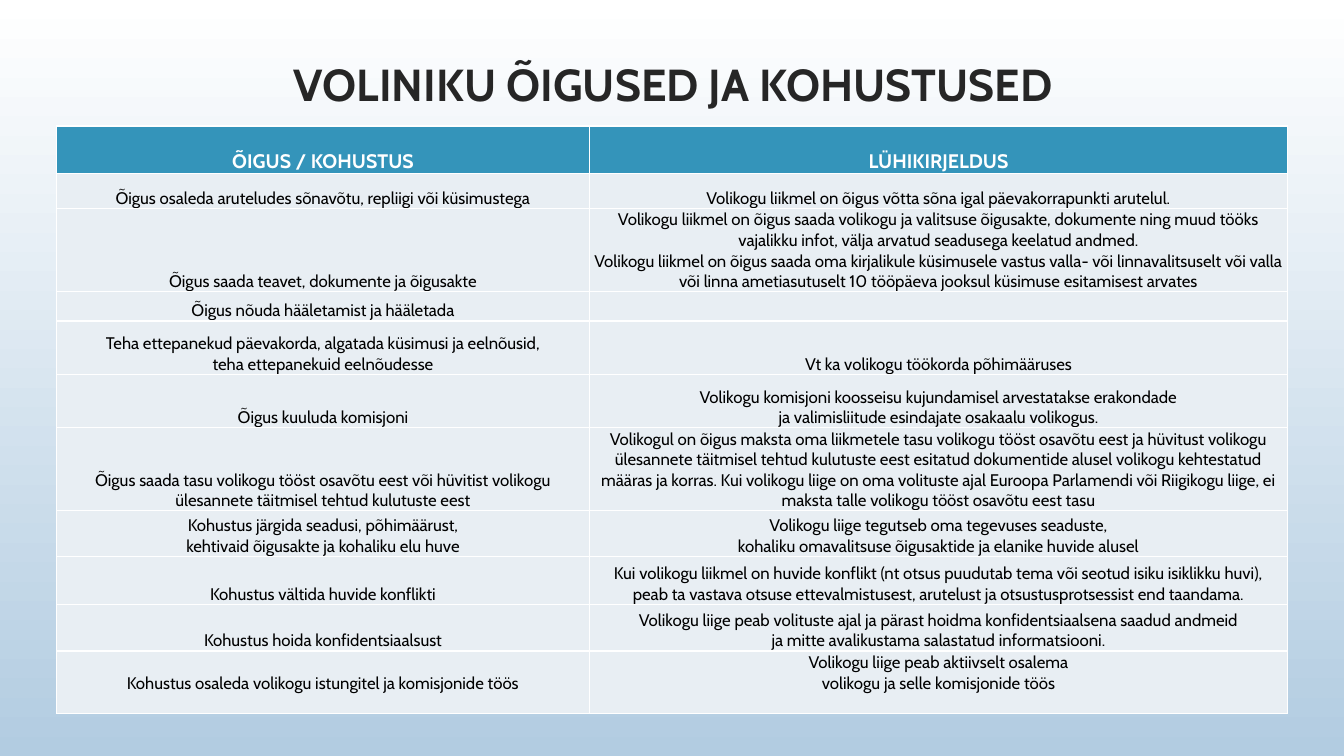
from lxml import etree
from pptx import Presentation
from pptx.dml.color import RGBColor
from pptx.enum.text import MSO_ANCHOR, MSO_AUTO_SIZE, PP_ALIGN
from pptx.oxml.ns import qn
from pptx.util import Inches, Pt

CENTER = PP_ALIGN.CENTER
MIDDLE, BOTTOM = MSO_ANCHOR.MIDDLE, MSO_ANCHOR.BOTTOM
NO_AUTOFIT = MSO_AUTO_SIZE.NONE
TITLE_ONLY = 5
FONT = "Cabin"
COLORS = {
    "sky_top": "FFFFFF",
    "sky_bottom": "B2CCE1",
    "title": "262626",
    "header": "3494BA",
    "header_text": "FFFFFF",
    "cell": "E8EEF3",
    "cell_text": "000000",
    "border": "FFFFFF",
}

TITLE = "VOLINIKU ÕIGUSED JA KOHUSTUSED"
COLUMN_WIDTHS = [5.29, 6.92]
LAST_ROW_BOTTOM_INSET = 0.2

# Row height, then the paragraphs of the left and of the right cell
DUTIES = [
    (0.47, ["ÕIGUS / KOHUSTUS"], ["LÜHIKIRJELDUS"]),
    (0.35, ["Õigus osaleda aruteludes sõnavõtu, repliigi või küsimustega"],
     ["Volikogu liikmel on õigus võtta sõna igal päevakorrapunkti arutelul."]),
    (0.82, ["Õigus saada teavet, dokumente ja õigusakte"],
     ["Volikogu liikmel on õigus saada volikogu ja valitsuse õigusakte, dokumente "
      "ning muud tööks vajalikku infot, välja arvatud seadusega keelatud andmed.",
      "Volikogu liikmel on õigus saada oma kirjalikule küsimusele vastus valla- või "
      "linnavalitsuselt või valla või linna ametiasutuselt 10 tööpäeva jooksul "
      "küsimuse esitamisest arvates"]),
    (0.29, ["Õigus nõuda hääletamist ja hääletada"], []),
    (0.53, ["Teha ettepanekud päevakorda, algatada küsimusi ja eelnõusid,",
            "teha ettepanekuid eelnõudesse"],
     ["Vt ka volikogu töökorda põhimääruses"]),
    (0.53, ["Õigus kuuluda komisjoni"],
     ["Volikogu komisjoni koosseisu kujundamisel arvestatakse erakondade",
      "ja valimisliitude esindajate osakaalu volikogus."]),
    (0.82, ["Õigus saada tasu volikogu tööst osavõtu eest või hüvitist volikogu "
            "ülesannete täitmisel tehtud kulutuste eest"],
     ["Volikogul on õigus maksta oma liikmetele tasu volikogu tööst osavõtu eest ja "
      "hüvitust volikogu ülesannete täitmisel tehtud kulutuste eest esitatud "
      "dokumentide alusel volikogu kehtestatud määras ja korras. Kui volikogu liige "
      "on oma volituste ajal Euroopa Parlamendi või Riigikogu liige, ei maksta talle "
      "volikogu tööst osavõtu eest tasu"]),
    (0.45, ["Kohustus järgida seadusi, põhimäärust,",
            "kehtivaid õigusakte ja kohaliku elu huve"],
     ["Volikogu liige tegutseb oma tegevuses seaduste,",
      "kohaliku omavalitsuse õigusaktide ja elanike huvide alusel"]),
    (0.48, ["Kohustus vältida huvide konflikti"],
     ["Kui volikogu liikmel on huvide konflikt (nt otsus puudutab tema või seotud "
      "isiku isiklikku huvi),",
      "peab ta vastava otsuse ettevalmistusest, arutelust ja otsustusprotsessist end "
      "taandama."]),
    (0.46, ["Kohustus hoida konfidentsiaalsust"],
     ["Volikogu liige peab volituste ajal ja pärast hoidma konfidentsiaalsena saadud "
      "andmeid",
      "ja mitte avalikustama salastatud informatsiooni."]),
    (0.62, ["Kohustus osaleda volikogu istungitel ja komisjonide töös"],
     ["Volikogu liige peab aktiivselt osalema",
      "volikogu ja selle komisjonide töös"]),
]


def rgb(name):
    return RGBColor.from_string(COLORS[name])


def paint_background(slide):
    fill = slide.background.fill
    fill.gradient()
    fill.gradient_angle = 270
    for stop, name in zip(fill.gradient_stops, ("sky_top", "sky_bottom")):
        stop.color.rgb = rgb(name)


def add_text(paragraph, text, size, color, bold):
    paragraph.alignment = CENTER
    run = paragraph.add_run()
    run.text = text
    run.font.name = FONT
    run.font.size = Pt(size)
    run.font.bold = bold
    run.font.color.rgb = rgb(color)


def place_title(slide, left, top, width, height):
    title = slide.shapes.title
    title.left, title.top = Inches(left), Inches(top)
    title.width, title.height = Inches(width), Inches(height)
    frame = title.text_frame
    frame.auto_size = NO_AUTOFIT
    frame.word_wrap = True
    frame.vertical_anchor = MIDDLE
    heading = frame.paragraphs[0]
    heading.line_spacing = 1.2
    heading.space_before = Pt(0)
    add_text(heading, TITLE, 32, "title", True)


def draw_borders(cell):
    properties = cell._tc.get_or_add_tcPr()
    for side in ("a:lnL", "a:lnR", "a:lnT", "a:lnB"):
        line = etree.SubElement(properties, qn(side), w=str(Pt(1)))
        solid = etree.SubElement(line, qn("a:solidFill"))
        etree.SubElement(solid, qn("a:srgbClr"), val=COLORS["border"])


def fill_cell(cell, lines, is_header, bottom_inset):
    draw_borders(cell)
    cell.fill.solid()
    cell.fill.fore_color.rgb = rgb("header" if is_header else "cell")
    cell.margin_left = cell.margin_right = cell.margin_top = Inches(0.01)
    cell.margin_bottom = Inches(bottom_inset)
    cell.vertical_anchor = BOTTOM
    size = 14 if is_header else 12
    color = "header_text" if is_header else "cell_text"
    frame = cell.text_frame
    for index, line in enumerate(lines):
        paragraph = frame.add_paragraph() if index else frame.paragraphs[0]
        add_text(paragraph, line, size, color, is_header)
    if not lines:
        # An empty cell needs a small end mark so that its row stays low
        frame.paragraphs[0]._p.get_or_add_endParaRPr().set("sz", str(size * 100))


def add_duties_table(slide, left, top):
    heights = [height for height, *_ in DUTIES]
    table = slide.shapes.add_table(
        len(DUTIES), len(COLUMN_WIDTHS), Inches(left), Inches(top),
        Inches(sum(COLUMN_WIDTHS)), Inches(sum(heights))).table
    table.horz_banding = False
    for column, width in zip(table.columns, COLUMN_WIDTHS):
        column.width = Inches(width)
    last = len(DUTIES) - 1
    for index, (height, *texts) in enumerate(DUTIES):
        table.rows[index].height = Inches(height)
        inset = LAST_ROW_BOTTOM_INSET if index == last else 0
        for cell, lines in zip(table.rows[index].cells, texts):
            fill_cell(cell, lines, index == 0, inset)


def main():
    deck = Presentation()
    deck.slide_width, deck.slide_height = Inches(13.33), Inches(7.5)
    slide = deck.slides.add_slide(deck.slide_layouts[TITLE_ONLY])
    paint_background(slide)
    place_title(slide, 0.35, 0.38, 12.66, 0.79)
    add_duties_table(slide, 0.56, 1.25)
    deck.save("out.pptx")


if __name__ == "__main__":
    main()
